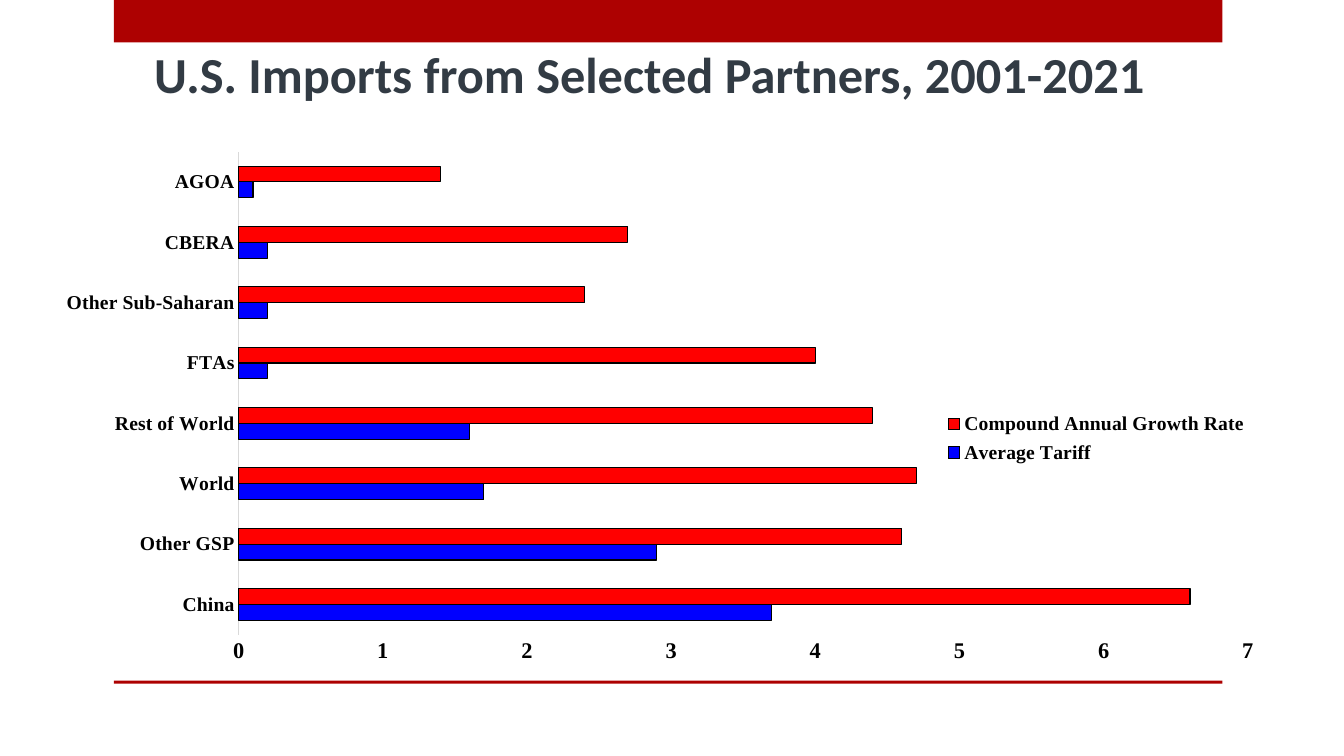
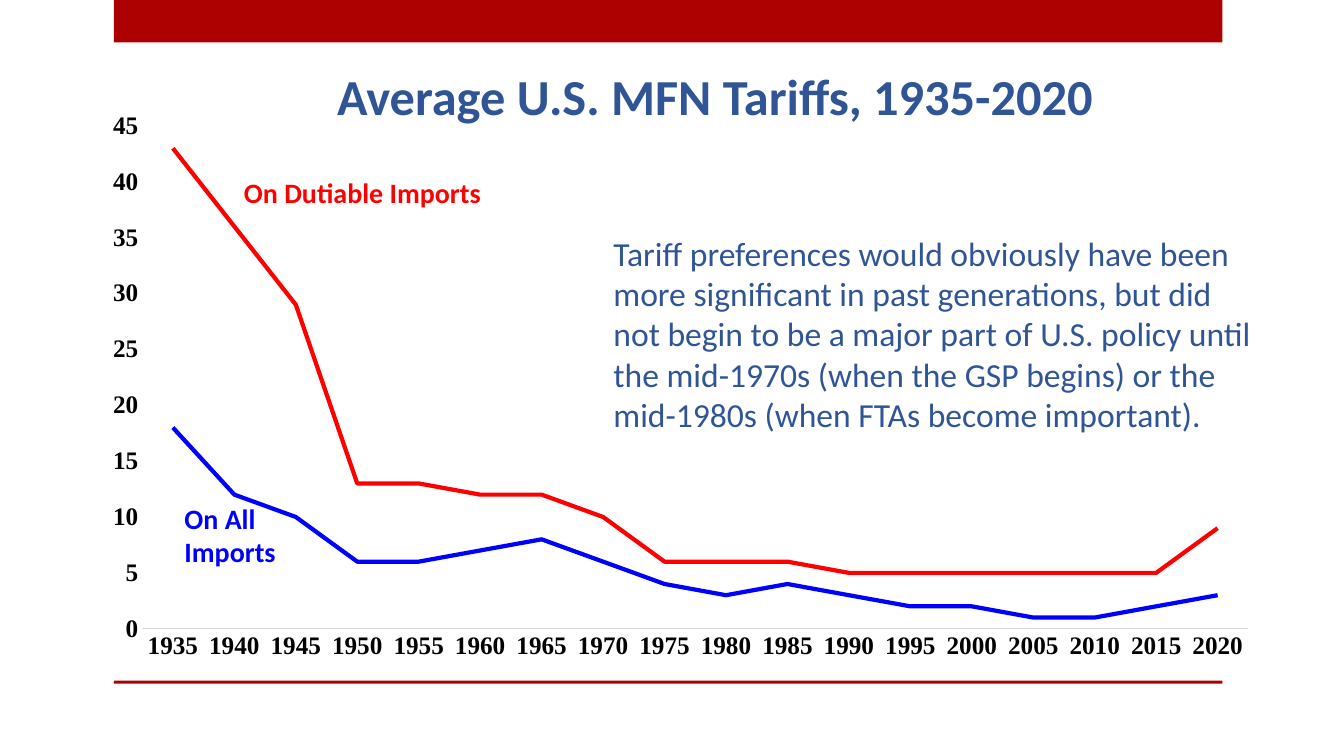
from lxml import etree
from pptx import Presentation
from pptx.chart.data import CategoryChartData
from pptx.dml.color import RGBColor
from pptx.enum import chart as c, shapes, text
from pptx.oxml import ns
from pptx.util import Cm, Pt

CRIMSON = RGBColor(0xAD, 0x01, 0x01)
SLATE = RGBColor(0x32, 0x3B, 0x44)
NAVY = RGBColor(0x2F, 0x55, 0x97)
RED = RGBColor(0xFF, 0x00, 0x00)
BLUE = RGBColor(0x00, 0x00, 0xFF)
BLACK = RGBColor(0x00, 0x00, 0x00)
GRAY = RGBColor(0xD9, 0xD9, 0xD9)
LEFT, CENTER = text.PP_ALIGN.LEFT, text.PP_ALIGN.CENTER


def write(sp, box, words, size, color, bold=True, align=LEFT):
    sp.left, sp.top, sp.width, sp.height = [Cm(v) for v in box]
    tf = sp.text_frame
    tf.word_wrap = True
    tf.auto_size = text.MSO_AUTO_SIZE.NONE
    tf.vertical_anchor = text.MSO_ANCHOR.TOP
    p = tf.paragraphs[0]
    p.text = words
    p.alignment = align
    p.font.name = "Calibri"
    p.font.size = Pt(size)
    p.font.bold = bold
    p.font.color.rgb = color
    return tf


def set_layout(parent, index, box, inner=False):
    for old in parent.findall(ns.qn("c:layout")):
        parent.remove(old)
    layout = etree.Element(ns.qn("c:layout"))
    manual = etree.SubElement(layout, ns.qn("c:manualLayout"))
    settings = [("layoutTarget", "inner")] if inner else []
    settings += [("xMode", "edge"), ("yMode", "edge")]
    settings += zip("xywh", box)
    for name, value in settings:
        etree.SubElement(manual, ns.qn(f"c:{name}")).set("val", str(value))
    parent.insert(index, layout)


prs = Presentation()
prs.slide_width, prs.slide_height = Cm(33.87), Cm(19.05)
title_only = prs.slide_layouts[5]
s1 = prs.slides.add_slide(title_only)
s2 = prs.slides.add_slide(title_only)

for top, height in [(0, 1.07), (17.15, 0.08)]:
    sp = s1.shapes.add_shape(shapes.MSO_SHAPE.RECTANGLE, Cm(2.87), Cm(top), Cm(27.94), Cm(height))
    sp.shadow.inherit = False
    sp.fill.solid()
    sp.fill.fore_color.rgb = CRIMSON
    sp.line.fill.background()
    title_only.shapes.element.append(sp.element)

write(s1.shapes.title, (3.63, 0.97, 27.25, 2.29),
      "U.S. Imports from Selected Partners, 2001-2021", 36, SLATE)
write(s2.shapes.title, (0.13, 1.52, 35.79, 2.29),
      "Average U.S. MFN Tariffs, 1935-2020", 36, NAVY, align=CENTER)

data = CategoryChartData()
data.categories = ["China", "Other GSP", "World", "Rest of World", "FTAs",
                   "Other Sub-Saharan", "CBERA", "AGOA"]
data.add_series("Average Tariff", [3.7, 2.9, 1.7, 1.6, 0.2, 0.2, 0.2, 0.1])
data.add_series("Compound Annual Growth Rate", [6.6, 4.6, 4.7, 4.4, 4, 2.4, 2.7, 1.4])
imports = s1.shapes.add_chart(c.XL_CHART_TYPE.BAR_CLUSTERED, Cm(0.23), Cm(3.81),
                              Cm(31.95), Cm(13.51), data).chart

data = CategoryChartData()
data.categories = [str(year) for year in range(1935, 2021, 5)]
data.add_series("Series 1", [43, 36, 29, 13, 13, 12, 12, 10, 6, 6, 6, 5, 5, 5, 5, 5, 5, 9])
data.add_series("Series 2", [18, 12, 10, 6, 6, 7, 8, 6, 4, 3, 4, 3, 2, 2, 1, 1, 2, 3])
tariffs = s2.shapes.add_chart(c.XL_CHART_TYPE.LINE, Cm(2.24), Cm(2.54),
                              Cm(29.85), Cm(14.4), data).chart

for chart, cat_size, val_size, top_value, step, plot_box in [
    (imports, 14, 16, 7, 1, (0.181, 0, 0.796, 0.902)),
    (tariffs, 18, 18, 45, 5, (0.045, 0.044, 0.934, 0.88)),
]:
    chart.has_title = False
    chart.has_legend = False
    chart.font.name = "Times New Roman"
    chart.font.size = Pt(10)
    chart.font.color.rgb = BLACK
    chart.plots[0].vary_by_categories = False
    set_layout(chart.element.xpath("//c:plotArea")[0], 0, plot_box, inner=True)
    for axis, size in [(chart.category_axis, cat_size), (chart.value_axis, val_size)]:
        axis.has_major_gridlines = False
        axis.major_tick_mark = axis.minor_tick_mark = c.XL_TICK_MARK.NONE
        font = axis.tick_labels.font
        font.name = "Times New Roman"
        font.size = Pt(size)
        font.bold = True
        font.color.rgb = BLACK
    chart.category_axis.format.line.color.rgb = GRAY
    chart.category_axis.format.line.width = Pt(0.75)
    chart.value_axis.format.line.fill.background()
    chart.value_axis.minimum_scale = 0
    chart.value_axis.maximum_scale = top_value
    chart.value_axis.major_unit = step
    chart.value_axis.tick_labels.number_format = "0"
    chart.value_axis.tick_labels.number_format_is_linked = False

imports.plots[0].gap_width = 182
imports.plots[0].overlap = 0
for series, color in zip(imports.plots[0].series, [BLUE, RED]):
    series.format.fill.solid()
    series.format.fill.fore_color.rgb = color
    series.format.line.color.rgb = BLACK
    series.format.line.width = Pt(0.75)

imports.has_legend = True
imports.legend.position = c.XL_LEGEND_POSITION.BOTTOM
imports.legend.include_in_layout = False
font = imports.legend.font
font.name = "Times New Roman"
font.size = Pt(14)
font.bold = True
font.color.rgb = BLACK
set_layout(imports.element.xpath("//c:legend")[0], 1, (0.73, 0.475, 0.255, 0.12))

for series, color in zip(tariffs.plots[0].series, [RED, BLUE]):
    series.smooth = False
    series.marker.style = c.XL_MARKER_STYLE.NONE
    series.format.line.color.rgb = color
    series.format.line.width = Pt(3)

for box, words, color in [
    ((6.15, 4.29, 6.58, 0.99), "On Dutiable Imports", RED),
    ((4.65, 12.5, 4.29, 0.99), "On All Imports", BLUE),
]:
    tf = write(s2.shapes.add_textbox(0, 0, 0, 0), box, words, 20, color)
    tf.margin_left = 0
    tf.paragraphs[0].space_after = Pt(12)

write(s2.shapes.add_textbox(0, 0, 0, 0), (15.21, 5.74, 16.71, 2.29),
      "Tariff preferences would obviously have been more significant in past generations, "
      "but did not begin to be a major part of U.S. policy until the mid-1970s (when the GSP "
      "begins) or the mid-1980s (when FTAs become important).", 24, NAVY, bold=False)

prs.save("out.pptx")
